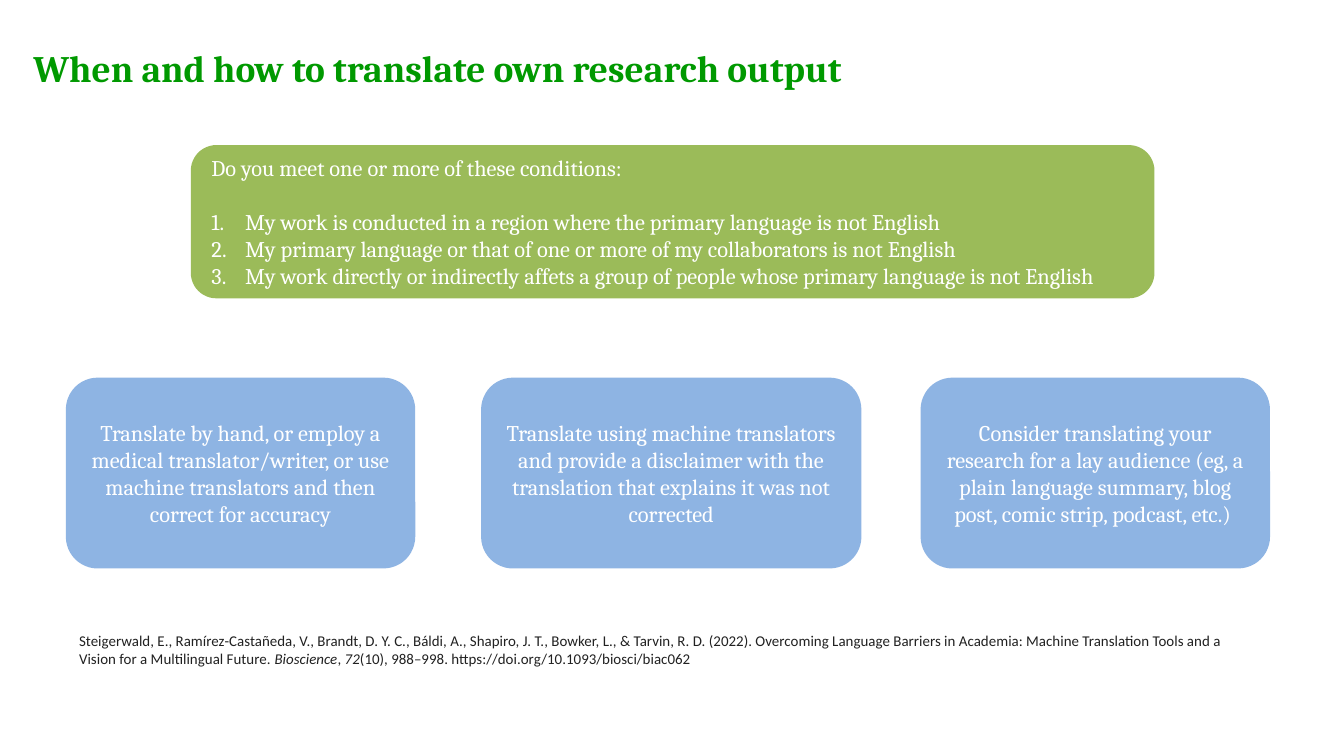
from pptx import Presentation
from pptx.dml.color import RGBColor
from pptx.enum.shapes import MSO_SHAPE as Shape
from pptx.enum.text import MSO_ANCHOR as Anchor, PP_ALIGN as Align
from pptx.oxml.ns import qn
from pptx.util import Inches, Pt
from lxml.etree import SubElement

GREEN, BLUE, WHITE = "9BBB59", "8EB4E3", "FFFFFF"

prs = Presentation()
prs.slide_width = Inches(10)
prs.slide_height = prs.slide_width * 9 // 16
slide = prs.slides.add_slide(prs.slide_layouts[6])
shapes = slide.shapes


def write(frame, paragraphs, size=12, font="Cambria", color=WHITE, bold=False,
          align=Align.LEFT, anchor=Anchor.MIDDLE):
    """Each paragraph is a list of runs; odd runs are italic."""
    frame.word_wrap = True
    frame.vertical_anchor = anchor
    for i, runs in enumerate(paragraphs):
        paragraph = frame.paragraphs[0] if i == 0 else frame.add_paragraph()
        paragraph.alignment = align
        for j, text in enumerate(runs):
            run = paragraph.add_run()
            run.text = text
            run.font.name, run.font.size = font, Pt(size)
            run.font.bold, run.font.italic = bold, j % 2 == 1
            run.font.color.rgb = RGBColor.from_string(color)


def add_card(left, top, width, height, fill):
    card = shapes.add_shape(Shape.ROUNDED_RECTANGLE, Inches(left), Inches(top),
                            Inches(width), Inches(height))
    card.shadow.inherit = False
    card.fill.solid()
    card.fill.fore_color.rgb = RGBColor.from_string(fill)
    card.line.fill.background()
    return card.text_frame


# Title
title = shapes.add_textbox(Inches(0.15), Inches(0.29), Inches(7.17), Inches(0.44))
write(title.text_frame, [["When and how to translate own research output"]],
      size=20, color="009900", bold=True, anchor=Anchor.TOP)

# Translation options
options = [
    (3.58, 2.83, "Translate using machine translators and provide a disclaimer with "
                 "the translation that explains it was not corrected"),
    (0.49, 2.6, "Translate by hand, or employ a medical translator/writer, or use "
                "machine translators and then correct for accuracy"),
    (6.85, 2.6, "Consider translating your research for a lay audience (eg, a plain "
                "language summary, blog post, comic strip, podcast, etc.) "),
]
for left, width, option in options:
    write(add_card(left, 2.81, width, 1.42, BLUE), [[option]], align=Align.CENTER)

# Reference
reference = shapes.add_textbox(Inches(0.49), Inches(4.65), Inches(8.96), Inches(0.37))
write(reference.text_frame, [[
    "Steigerwald, E., Ramírez-Castañeda, V., Brandt, D. Y. C., Báldi, A., Shapiro, J. T., "
    "Bowker, L., & Tarvin, R. D. (2022). Overcoming Language Barriers in Academia: "
    "Machine Translation Tools and a Vision for a Multilingual Future. ",
    "Bioscience", ", ", "72", "(10), 988–998. https://doi.org/10.1093/biosci/biac062",
]], size=8, font="Calibri", color="212121", anchor=Anchor.TOP)

# Conditions, numbered below the question
conditions = add_card(1.42, 1.08, 7.17, 1.14, GREEN)
write(conditions, [
    ["Do you meet one or more of these conditions:"],
    ["My work is conducted in a region where the primary language is not English"],
    ["My primary language or that of one or more of my collaborators is not English"],
    ["My work directly or indirectly affets a group of people whose primary language is not English"],
])
numbered = conditions.paragraphs[1:]
numbered[0].space_before = Pt(14.4)
for condition in numbered:
    props = condition._p.get_or_add_pPr()
    props.set("marL", str(Inches(0.25)))
    props.set("indent", str(-Inches(0.25)))
    SubElement(props, qn("a:buFont"), typeface="+mj-lt")
    SubElement(props, qn("a:buAutoNum"), type="arabicPeriod")

prs.save("out.pptx")
